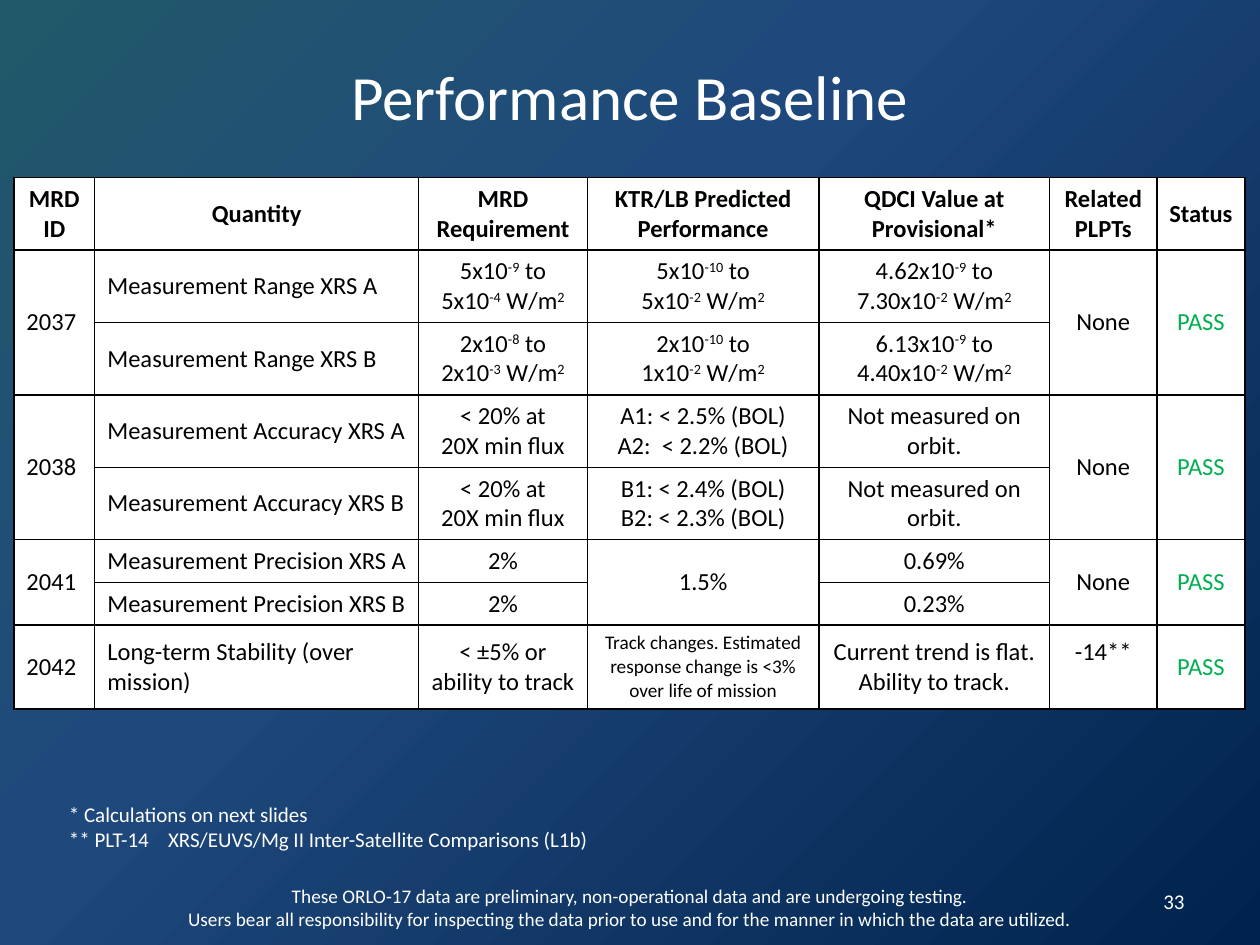
from pptx import Presentation
from pptx.dml.color import RGBColor
from pptx.enum.text import MSO_ANCHOR as Anchor, PP_ALIGN as Align
from pptx.oxml import parse_xml
from pptx.oxml.ns import nsdecls
from pptx.util import Cm, Pt

COLORS = {"white": "FFFFFF", "black": "000000", "pass": "00B050",
          "teal": "215968", "blue": "1F497D", "navy": "00234D"}


def write_text(frame, text, size, color, align=Align.LEFT, bold=False):
    """Write one paragraph per line; text between ^ marks is superscript."""
    frame.word_wrap = True
    for number, line in enumerate(text.split("\n")):
        para = frame.add_paragraph() if number else frame.paragraphs[0]
        para.alignment = align
        para.font.name = "Calibri"
        para.font.size = Pt(size)
        para.font.bold = bold
        para.font.color.rgb = RGBColor.from_string(COLORS[color])
        for index, part in enumerate(line.split("^")):
            if part:
                span = para.add_run()
                span.text = part
                if index % 2:
                    span.font._element.set("baseline", "30000")


def draw_borders(cell):
    properties = cell._tc.get_or_add_tcPr()
    for index, side in enumerate(("lnL", "lnR", "lnT", "lnB")):
        properties.insert(index, parse_xml(
            f'<a:{side} {nsdecls("a")} w="12700"><a:solidFill>'
            f'<a:srgbClr val="{COLORS["black"]}"/></a:solidFill></a:{side}>'))


deck = Presentation()
deck.slide_width, deck.slide_height = Cm(25.4), Cm(19.05)
page = deck.slides.add_slide(deck.slide_layouts[6])

# Background gradient spreading from the top left corner
stops = "".join(
    f'<a:gs pos="{position * 1000}"><a:srgbClr val="{COLORS[name]}"/></a:gs>'
    for position, name in ((0, "teal"), (40, "blue"), (100, "navy")))
page.element.cSld.insert(0, parse_xml(
    f'<p:bg {nsdecls("p", "a")}><p:bgPr><a:gradFill rotWithShape="1">'
    f'<a:gsLst>{stops}</a:gsLst><a:path path="circle">'
    '<a:fillToRect r="100000" b="100000"/></a:path></a:gradFill>'
    '<a:effectLst/></p:bgPr></p:bg>'))

# Title, page number, footnotes and disclaimer
footnotes = ("* Calculations on next slides\n"
             "** PLT-14\tXRS/EUVS/Mg II Inter-Satellite Comparisons (L1b)")
disclaimer = (
    "These ORLO-17 data are preliminary, non-operational data and are undergoing testing.\n"
    "Users bear all responsibility for inspecting the data prior to use "
    "and for the manner in which the data are utilized.")
text_boxes = [
    ("Performance Baseline", (1.75, 0.81, 21.9, 2.21), 36, Align.CENTER, Anchor.MIDDLE),
    ("33", (18.21, 17.65, 5.92, 1.02), 12, Align.RIGHT, Anchor.MIDDLE),
    (footnotes, (1.14, 16.03, 11.56, 1.27), 12, Align.LEFT, Anchor.TOP),
    (disclaimer, (1.93, 17.88, 21.54, 0.84), 11, Align.CENTER, Anchor.MIDDLE),
]
for text, place, size, align, anchor in text_boxes:
    box = page.shapes.add_textbox(*map(Cm, place))
    box.text_frame.vertical_anchor = anchor
    write_text(box.text_frame, text, size, "white", align)
    if text == footnotes:
        tab_stop = parse_xml(f'<a:tabLst {nsdecls("a")}>'
                             f'<a:tab pos="{Cm(2)}" algn="l"/></a:tabLst>')
        box.text_frame.paragraphs[1]._p.get_or_add_pPr().insert(0, tab_stop)

# Table; None marks a cell covered by the one above it
rows = [
    ["MRD\nID", "Quantity", "MRD Requirement", "KTR/LB Predicted Performance",
     "QDCI Value at Provisional*", "Related\nPLPTs", "Status"],
    ["2037", "Measurement Range XRS A", "5x10^-9^ to\n5x10^-4^ W/m^2^",
     "5x10^-10^ to\n5x10^-2^ W/m^2^", "4.62x10^-9^ to 7.30x10^-2^ W/m^2^", "None", "PASS"],
    [None, "Measurement Range XRS B", "2x10^-8^ to\n2x10^-3^ W/m^2^",
     "2x10^-10^ to\n1x10^-2^ W/m^2^", "6.13x10^-9^ to 4.40x10^-2^ W/m^2^", None, None],
    ["2038", "Measurement Accuracy XRS A", "< 20% at\n20X min flux",
     "A1: < 2.5% (BOL)\nA2:  < 2.2% (BOL)", "Not measured on orbit.", "None", "PASS"],
    [None, "Measurement Accuracy XRS B", "< 20% at\n20X min flux",
     "B1: < 2.4% (BOL)\nB2: < 2.3% (BOL)", "Not measured on orbit.", None, None],
    ["2041", "Measurement Precision XRS A", "2%", "1.5%", "0.69%", "None", "PASS"],
    [None, "Measurement Precision XRS B", "2%", None, "0.23%", None, None],
    ["2042", "Long-term Stability (over mission)", "< ±5% or ability to track",
     "Track changes. Estimated response change is <3% over life of mission",
     "Current trend is flat.\nAbility to track.", "-14**", "PASS"],
]
column_widths = [1.63, 6.53, 3.4, 4.67, 4.65, 2.16, 1.78]
row_heights = [1.46] * 5 + [0.86, 0.86, 1.69]

table = page.shapes.add_table(len(rows), len(column_widths), Cm(0.28), Cm(3.58),
                              Cm(sum(column_widths)), Cm(sum(row_heights))).table
table.first_row = table.horz_banding = False
for column, width in zip(table.columns, column_widths):
    column.width = Cm(width)
for row, height in zip(table.rows, row_heights):
    row.height = Cm(height)

for r, row in enumerate(rows):
    for c, text in enumerate(row):
        cell = table.cell(r, c)
        cell.fill.solid()
        cell.fill.fore_color.rgb = RGBColor.from_string(COLORS["white"])
        cell.vertical_anchor = Anchor.MIDDLE
        draw_borders(cell)
        if text is None:
            table.cell(r - 1, c).merge(cell)
            continue
        header = r == 0
        align = Align.LEFT if c < 2 and not header else Align.CENTER
        size = 11 if text.startswith("Track changes") else 14
        color = "pass" if text == "PASS" else "black"
        write_text(cell.text_frame, text, size, color, align, header)
        if c == len(row) - 1:
            cell.margin_left = cell.margin_right = Cm(0.15)
        elif c == 1 and not header:
            cell.margin_right = Cm(0.15)

# The last PLPT entry lines up with the first line of its neighbours
table.cell(len(rows) - 1, 5).margin_bottom = Cm(0.73)

deck.save("out.pptx")
